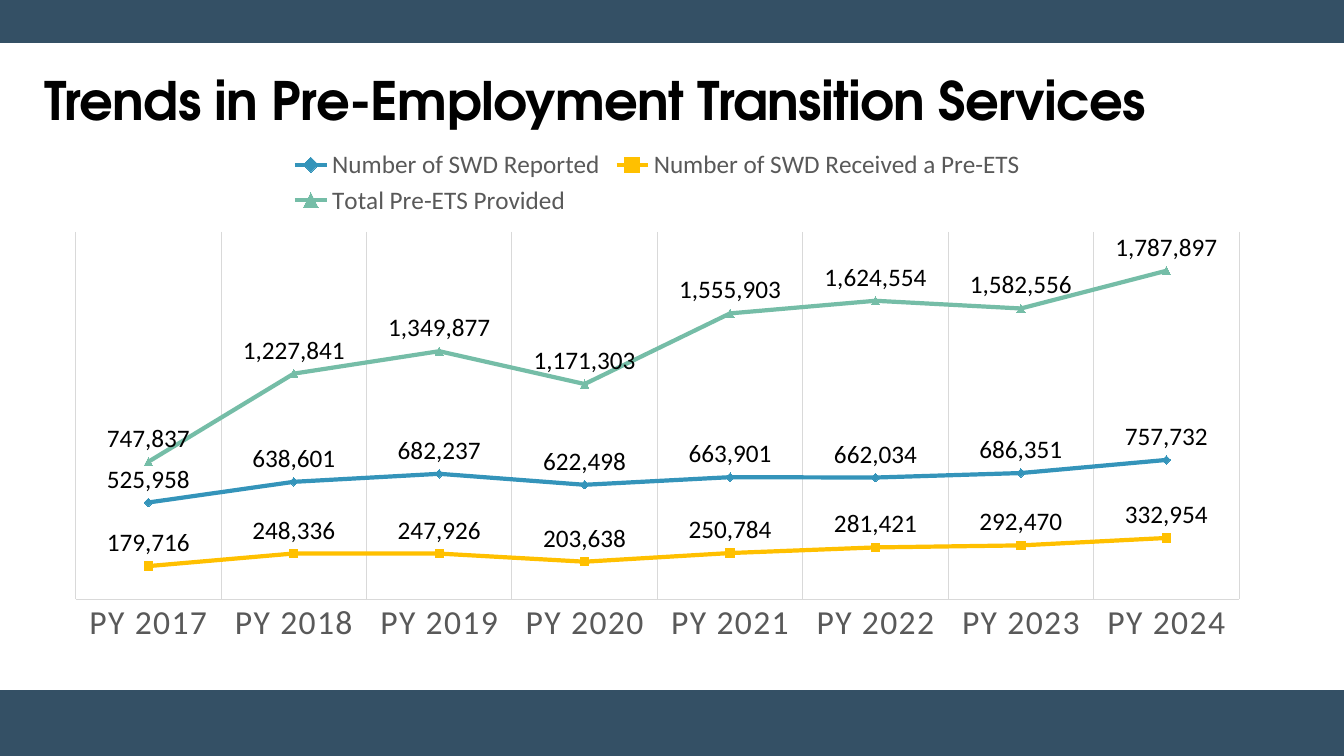
from lxml import etree
from pptx import Presentation
from pptx.chart.data import CategoryChartData
from pptx.dml.color import RGBColor
from pptx.enum.chart import (XL_CHART_TYPE, XL_LABEL_POSITION, XL_LEGEND_POSITION,
                             XL_MARKER_STYLE, XL_TICK_MARK)
from pptx.enum.shapes import MSO_SHAPE
from pptx.enum.text import MSO_ANCHOR
from pptx.oxml.ns import qn
from pptx.util import Inches, Pt

COLORS = {"band": "345065", "black": "000000", "gray": "595959", "grid": "D9D9D9",
          "reported": "3494BA", "received": "FFC000", "provided": "75BDA7"}


def rgb(name):
    return RGBColor.from_string(COLORS[name])


def style_font(font, name, size, color):
    font.name = name
    font.size = Pt(size)
    font.color.rgb = rgb(color)


prs = Presentation()
prs.slide_width, prs.slide_height = Inches(13.33), Inches(7.5)
slide = prs.slides.add_slide(prs.slide_layouts[6])

# Bands along the bottom and top edges
for top, height in [(6.85, 0.65), (0, 0.42)]:
    band = slide.shapes.add_shape(MSO_SHAPE.RECTANGLE, 0, Inches(top),
                                  prs.slide_width, Inches(height))
    band.shadow.inherit = False
    band.fill.solid()
    band.fill.fore_color.rgb = rgb("band")
    band.line.color.rgb = rgb("band")
    band.line.width = Pt(1)

# Title
title = slide.shapes.add_textbox(Inches(0.34), Inches(0.04), Inches(12.2), Inches(1.32))
title.text_frame.word_wrap = True
title.text_frame.vertical_anchor = MSO_ANCHOR.BOTTOM
heading = title.text_frame.paragraphs[0]
heading.line_spacing = 0.9
heading_run = heading.add_run()
heading_run.text = "Trends in Pre-Employment Transition Services"
style_font(heading_run.font, "TeX Gyre Adventor", 37.8, "black")
heading_run.font.bold = True
heading_run.font._element.set("spc", "-50")

# Trend chart
trends = [
    ("Number of SWD Reported", "reported", XL_MARKER_STYLE.DIAMOND,
     [525958, 638601, 682237, 622498, 663901, 662034, 686351, 757732]),
    ("Number of SWD Received a Pre-ETS", "received", XL_MARKER_STYLE.SQUARE,
     [179716, 248336, 247926, 203638, 250784, 281421, 292470, 332954]),
    ("Total Pre-ETS Provided", "provided", XL_MARKER_STYLE.TRIANGLE,
     [747837, 1227841, 1349877, 1171303, 1555903, 1624554, 1582556, 1787897]),
]
chart_data = CategoryChartData(number_format="#,##0")
chart_data.categories = [f"PY {year}" for year in range(2017, 2025)]
for name, _, _, values in trends:
    chart_data.add_series(name, values)
chart = slide.shapes.add_chart(XL_CHART_TYPE.LINE_MARKERS, Inches(0.51), Inches(1.36),
                               Inches(12.02), Inches(5.14), chart_data).chart
style_font(chart.font, "Calibri", 10, "black")
chart.has_title = False
chart.has_legend = True
chart.legend.position = XL_LEGEND_POSITION.TOP
chart.legend.include_in_layout = False
style_font(chart.legend.font, "Calibri", 18, "gray")

years = chart.category_axis
years.major_tick_mark = years.minor_tick_mark = XL_TICK_MARK.NONE
years.has_major_gridlines = True
for line in (years.format.line, years.major_gridlines.format.line):
    line.color.rgb = rgb("grid")
    line.width = Pt(0.75)
style_font(years.tick_labels.font, "Calibri", 24, "gray")
years._element.find(".//" + qn("a:defRPr")).set("spc", "100")

counts = chart.value_axis
counts.minimum_scale, counts.maximum_scale = 0, 2000000
counts.has_major_gridlines = False
counts.visible = False

plot = chart.plots[0]
plot.vary_by_categories = False
for series, (_, color, marker, _) in zip(plot.series, trends):
    series.smooth = False
    series.format.line.color.rgb = rgb(color)
    series.format.line.width = Pt(3)
    series.marker.style = marker
    series.marker.size = 6
    series.marker.format.fill.solid()
    series.marker.format.fill.fore_color.rgb = rgb(color)
    series.marker.format.line.color.rgb = rgb(color)
    labels = series.data_labels
    labels.show_value = True
    labels.position = XL_LABEL_POSITION.ABOVE
    labels.number_format = "#,##0"
    labels.number_format_is_linked = False
    style_font(labels.font, "Calibri", 18, "black")

# Fixed inner plot area, as fractions of the chart
plot_area = chart._chartSpace.chart.plotArea
layout = plot_area.find(qn("c:layout"))
if layout is None:
    layout = etree.Element(qn("c:layout"))
    plot_area.insert(0, layout)
manual = etree.SubElement(layout, qn("c:manualLayout"))
for tag, value in [("layoutTarget", "inner"), ("xMode", "edge"), ("yMode", "edge"),
                   ("x", "0.02"), ("y", "0.183"), ("w", "0.96"), ("h", "0.709")]:
    etree.SubElement(manual, qn(f"c:{tag}")).set("val", value)

prs.save("out.pptx")
